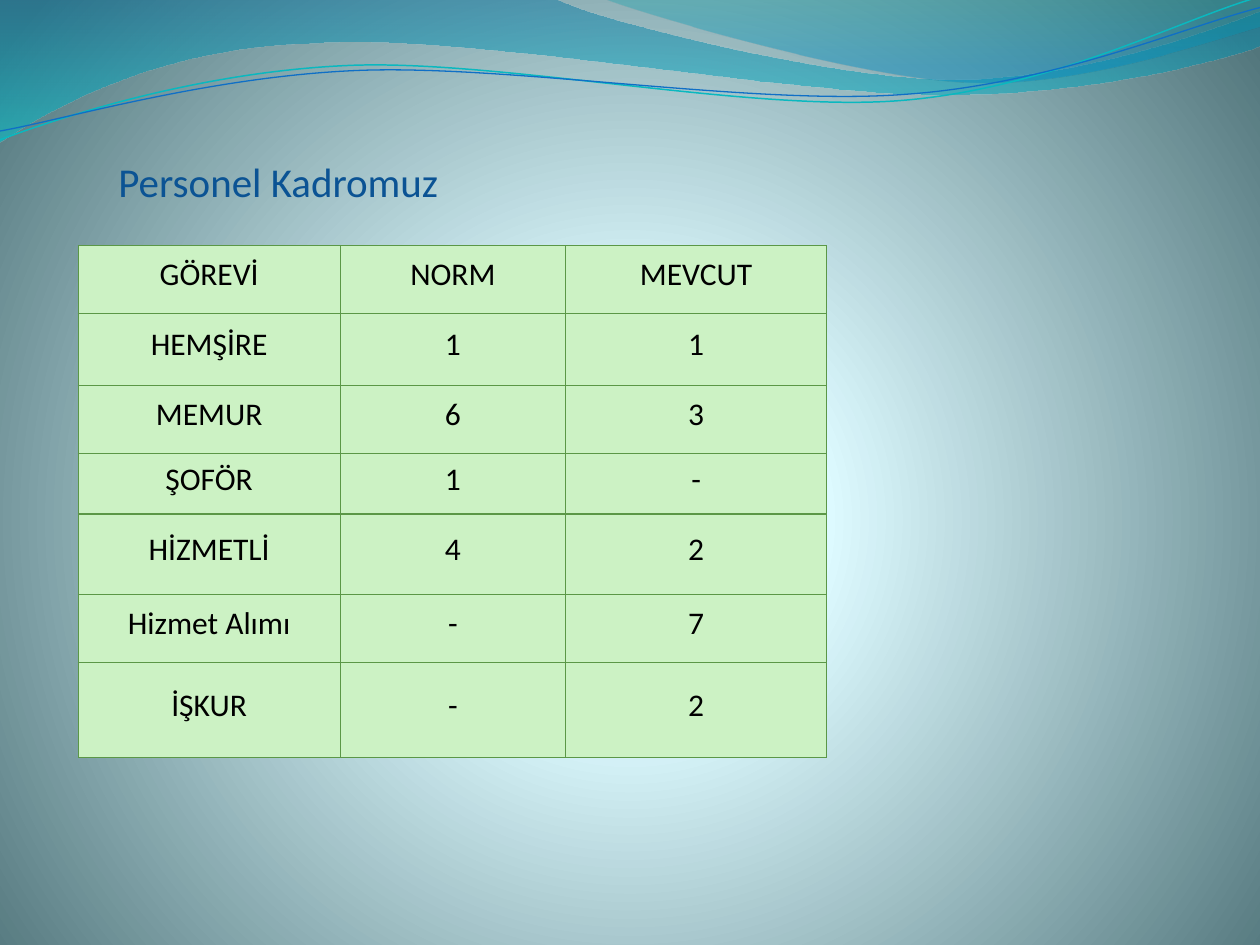
from lxml.etree import SubElement
from pptx import Presentation
from pptx.dml.color import RGBColor
from pptx.enum.text import MSO_ANCHOR, PP_ALIGN
from pptx.oxml import parse_xml
from pptx.oxml.ns import nsdecls, qn
from pptx.util import Inches, Pt

rgb = RGBColor.from_string


def put(frame, text, size, color, align, line=None, before=0):
    par = frame.paragraphs[0]
    par.alignment = align
    par.space_before = Pt(before)
    par.line_spacing = line and Pt(line)
    run = par.add_run()
    run.text = text
    run.font.size = Pt(size)
    run.font.name = "Calibri"
    run.font.color.rgb = rgb(color)


def blend(box, stops, shade):
    """Swap the solid fill in box for a gradient of (place, colour, opacity)."""
    marks = "".join(
        f'<a:gs pos="{at * 1000}"><a:srgbClr val="{color}">'
        f'<a:alpha val="{clear * 1000}"/></a:srgbClr></a:gs>'
        for at, color, clear in stops)
    old = box.find(qn("a:solidFill"))
    box.replace(old, parse_xml(
        f'<a:gradFill {nsdecls("a")} rotWithShape="1">'
        f'<a:gsLst>{marks}</a:gsLst>{shade}</a:gradFill>'))


deck = Presentation()
deck.slide_width, deck.slide_height = Inches(10), Inches(7.5)
slide = deck.slides.add_slide(deck.slide_layouts[5])

# Background: light glow a little below the centre
back = slide.background.fill
back.solid()
back.fore_color.rgb = rgb("DEFBFF")
blend(slide._element.find(".//" + qn("p:bgPr")),
      [(0, "DEFBFF", 100), (25, "DDFAFF", 100), (100, "52767C", 100)],
      '<a:path path="circle"><a:fillToRect l="10000" t="110000" '
      'r="10000" b="100000"/></a:path>')

# Waves: a pair is a straight step, six numbers are a Bezier curve
waves = [
    ([(0, 0), (4.4, -0.01), (4.76, 0.17, 6.64, 0.63, 7.58, 0.63),
      (8.53, 0.63, 9.58, 0.26, 10, 0.09), (10.01, 0.36),
      (9.83, 0.44, 8.7, 0.76, 7.46, 0.75),
      (6.22, 0.75, 3.82, 0.28, 2.57, 0.34),
      (1.29, 0.36, 0.46, 0.83, -0.01, 1.13)],
     [(0, "0074A1", 45), (100, "00C6CF", 55)], None),
    ([(4.79, -0.01), (5.09, 0.11, 6.82, 0.62, 7.69, 0.65),
      (8.56, 0.69, 9.61, 0.32, 10, 0.21), (10, 0)],
     [(0, "00A1A9", 30), (80, "008BBF", 45)], None),
    ([(0, 1.11), (0.48, 0.93, 1.58, 0.57, 2.77, 0.52),
      (3.95, 0.47, 5.93, 0.89, 7.13, 0.8),
      (8.33, 0.71, 9.38, 0.15, 9.98, -0.02)], None, ("0AB8BF", 0.85)),
    ([(0, 1.04), (0.47, 0.96, 1.64, 0.61, 2.83, 0.56),
      (4.03, 0.51, 5.97, 0.84, 7.17, 0.75),
      (8.36, 0.67, 9.41, 0.21, 10, 0.06)], None, ("0F6FC6", 0.75)),
]
for moves, stops, line in waves:
    spots = [(Inches(move[-2]), Inches(move[-1])) for move in moves]
    form = slide.shapes.build_freeform(*spots[0])
    form.add_line_segments(spots[1:], close=bool(stops))
    wave = form.convert_to_shape()
    # Bend the straight steps that have control points
    legs = list(wave._element.iter(qn("a:lnTo")))
    for leg, move in zip(legs, moves[1:]):
        if len(move) == 6:
            dots = "".join(
                f'<a:pt x="{Inches(x) - wave.left}" y="{Inches(y) - wave.top}"/>'
                for x, y in zip(move[::2], move[1::2]))
            leg.getparent().replace(leg, parse_xml(
                f'<a:cubicBezTo {nsdecls("a")}>{dots}</a:cubicBezTo>'))
    wave.shadow.inherit = False
    if stops:
        wave.fill.solid()
        blend(wave._element.spPr, stops, '<a:lin ang="5400000" scaled="0"/>')
        wave.line.fill.background()
    else:
        wave.fill.background()
        wave.line.color.rgb = rgb(line[0])
        wave.line.width = Pt(line[1])

# Staff table
rows = [
    ("GÖREVİ", "NORM", "MEVCUT"),
    ("HEMŞİRE", "1", "1"),
    ("MEMUR", "6", "3"),
    ("ŞOFÖR", "1", "-"),
    ("HİZMETLİ", "4", "2"),
    ("Hizmet Alımı", "-", "7"),
    ("İŞKUR", "-", "2"),
]
widths = [2.08, 1.79, 2.07]
heights = [0.54, 0.57, 0.54, 0.48, 0.64, 0.54, 0.75]
table = slide.shapes.add_table(
    len(rows), len(widths), Inches(0.62), Inches(1.95),
    Inches(sum(widths)), Inches(sum(heights))).table
for col, width in zip(table.columns, widths):
    col.width = Inches(width)
for r, (row, height) in enumerate(zip(rows, heights)):
    table.rows[r].height = Inches(height)
    for c, text in enumerate(row):
        cell = table.cell(r, c)
        cell.vertical_anchor = MSO_ANCHOR.MIDDLE
        cell.margin_left = cell.margin_right = Inches(0.07)
        cell.margin_top = cell.margin_bottom = 0
        put(cell.text_frame, text, 18, "000000", PP_ALIGN.CENTER,
            line=16.8, before=6)
        # Borders come before the fill in the cell properties
        props = cell._tc.get_or_add_tcPr()
        for side in ("lnL", "lnR", "lnT", "lnB"):
            edge = SubElement(props, qn("a:" + side), w=str(Pt(0.75)))
            paint = SubElement(edge, qn("a:solidFill"))
            SubElement(paint, qn("a:srgbClr"), val="5B9747")
        cell.fill.solid()
        cell.fill.fore_color.rgb = rgb("CCF2C4")

# Title, in front of the rest
title = slide.shapes.title
title.left, title.top = Inches(0.94), Inches(1.09)
title.width, title.height = Inches(4.22), Inches(0.54)
frame = title.text_frame
frame.word_wrap = True
frame.vertical_anchor = MSO_ANCHOR.BOTTOM
frame.margin_left = frame.margin_right = frame.margin_bottom = 0
frame.margin_top = Inches(0.05)
put(frame, "Personel Kadromuz", 23.4, "0B5394", PP_ALIGN.LEFT)
slide.shapes._spTree.append(title._element)

deck.save("out.pptx")
